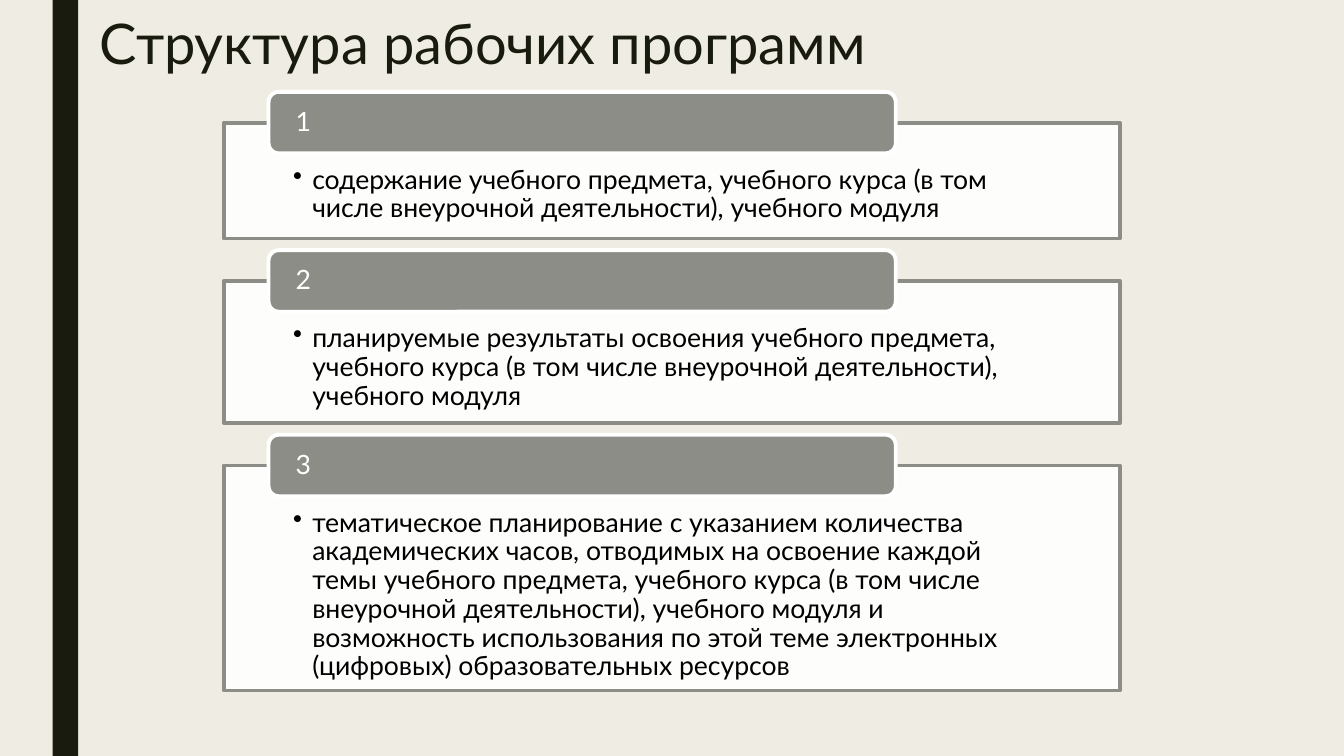
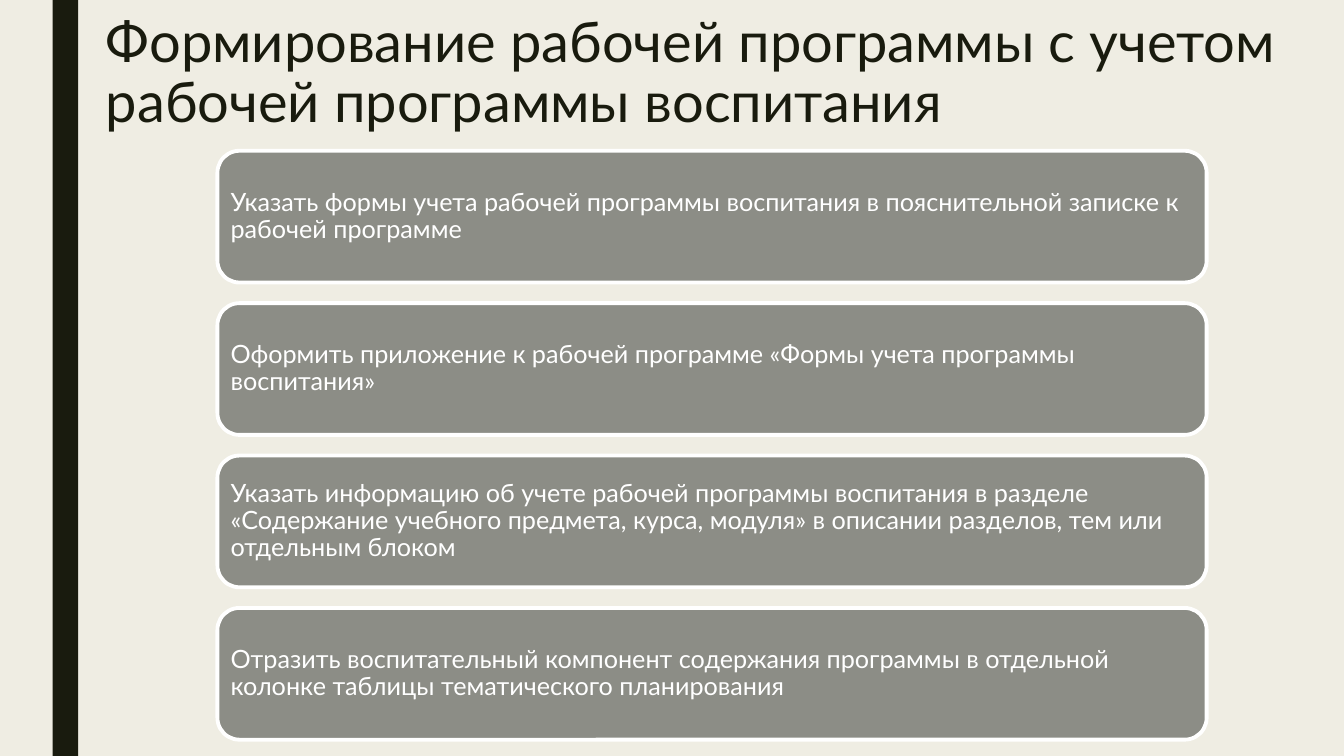
from dataclasses import dataclass

from lxml.etree import SubElement
from pptx import Presentation
from pptx.dml.color import RGBColor
from pptx.enum.shapes import MSO_SHAPE
from pptx.enum.text import MSO_ANCHOR, PP_ALIGN
from pptx.oxml.ns import qn
from pptx.shapes.autoshape import Shape
from pptx.slide import Slide
from pptx.util import Cm, Pt

INK = RGBColor(0x19, 0x1B, 0x0E)
CREAM = RGBColor(0xEF, 0xED, 0xE3)
GRAY = RGBColor(0x8C, 0x8D, 0x86)
WHITE = RGBColor(0xFF, 0xFF, 0xFF)
BLACK = RGBColor(0x00, 0x00, 0x00)
FONT = "Lato"
WIDTH, HEIGHT = 33.87, 19.05


@dataclass
class Box:
    left: float
    top: float
    width: float
    height: float


@dataclass
class TextStyle:
    size: float
    color: RGBColor
    insets: tuple[float, float, float, float]
    anchor: MSO_ANCHOR = MSO_ANCHOR.MIDDLE
    spacing: float = 0.9


@dataclass
class Section:
    label: str
    text: str
    height: float


TITLE = TextStyle(40, INK, (0.25, 0.13, 0.25, 0.13), MSO_ANCHOR.TOP, 0.89)
TAB = TextStyle(19, WHITE, (0.61, 0, 0.61, 0))
BODY = TextStyle(19, BLACK, (1.75, 1.1, 1.75, 0.38), MSO_ANCHOR.TOP)
STEP = TextStyle(18, WHITE, (0.17, 0.17, 0.17, 0.17))

SECTIONS = [
    Section("1", "содержание учебного предмета, учебного курса (в том числе "
            "внеурочной деятельности), учебного модуля", 2.92),
    Section("2", "планируемые результаты освоения учебного предмета, учебного "
            "курса (в том числе внеурочной деятельности), учебного модуля", 3.58),
    Section("3", "тематическое планирование с указанием количества академических "
            "часов, отводимых на освоение каждой темы учебного предмета, учебного "
            "курса (в том числе внеурочной деятельности), учебного модуля и "
            "возможность использования по этой теме электронных (цифровых) "
            "образовательных ресурсов", 5.67),
]
STEPS = [
    "Указать формы учета рабочей программы воспитания в пояснительной записке "
    "к рабочей программе",
    "Оформить приложение к рабочей программе «Формы учета программы воспитания»",
    "Указать информацию об учете рабочей программы воспитания в разделе "
    "«Содержание учебного предмета, курса, модуля» в описании разделов, тем или "
    "отдельным блоком",
    "Отразить воспитательный компонент содержания программы в отдельной колонке "
    "таблицы тематического планирования",
]


def lengths(box: Box) -> tuple[Cm, Cm, Cm, Cm]:
    return Cm(box.left), Cm(box.top), Cm(box.width), Cm(box.height)


def write(sp: Shape, text: str, style: TextStyle) -> None:
    tf = sp.text_frame
    tf.word_wrap = True
    tf.vertical_anchor = style.anchor
    tf.margin_left, tf.margin_top, tf.margin_right, tf.margin_bottom = map(Cm, style.insets)
    p = tf.paragraphs[0]
    p.text = text
    p.alignment = PP_ALIGN.LEFT
    p.line_spacing = style.spacing
    p.font.name = FONT
    p.font.size = Pt(style.size)
    p.font.color.rgb = style.color


def add_box(s: Slide, kind: MSO_SHAPE, box: Box, fill: RGBColor,
            line: RGBColor | None = None) -> Shape:
    sp = s.shapes.add_shape(kind, *lengths(box))
    sp.shadow.inherit = False
    sp.fill.solid()
    sp.fill.fore_color.rgb = fill
    if line is None:
        sp.line.fill.background()
    else:
        sp.line.color.rgb = line
        sp.line.width = Pt(2.75)
    return sp


def set_opacity(sp: Shape, percent: int) -> None:
    color = sp.fill._xPr.find(qn("a:solidFill"))[0]
    SubElement(color, qn("a:alpha"), val=str(percent * 1000))


def add_bullet(sp: Shape, indent: float) -> None:
    pPr = sp.text_frame.paragraphs[0]._p.get_or_add_pPr()
    pPr.set("marL", str(Cm(indent)))
    pPr.set("indent", str(-Cm(indent)))
    bullet = pPr.makeelement(qn("a:buChar"), {"char": "•"})
    pPr.insert_element_before(bullet, "a:tabLst", "a:defRPr", "a:extLst")


def add_slide(prs: Presentation, title: str, box: Box) -> Slide:
    s = prs.slides.add_slide(prs.slide_layouts[6])
    add_box(s, MSO_SHAPE.RECTANGLE, Box(1.33, 0, 0.64, HEIGHT), INK)
    write(s.shapes.add_textbox(*lengths(box)), title, TITLE)
    return s


def add_sections(s: Slide) -> None:
    left, top, width, gap, tab_height = 5.64, 3.09, 22.58, 1.07, 1.55
    for section in SECTIONS:
        panel = add_box(s, MSO_SHAPE.RECTANGLE,
                        Box(left, top, width, section.height), WHITE, GRAY)
        set_opacity(panel, 90)
        write(panel, section.text, BODY)
        add_bullet(panel, 0.48)
        tab_box = Box(left + width * 0.05, top - tab_height / 2, width * 0.7, tab_height)
        tab = add_box(s, MSO_SHAPE.ROUNDED_RECTANGLE, tab_box, GRAY, WHITE)
        write(tab, section.label, TAB)
        top += section.height + gap


def add_steps(s: Slide) -> None:
    for i, text in enumerate(STEPS):
        box = Box(5.48, 3.8 + i * 3.84, 24.93, 3.32)
        write(add_box(s, MSO_SHAPE.ROUNDED_RECTANGLE, box, GRAY, WHITE), text, STEP)


def main() -> None:
    prs = Presentation()
    prs.slide_width, prs.slide_height = Cm(WIDTH), Cm(HEIGHT)
    background = prs.slide_master.background.fill
    background.solid()
    background.fore_color.rgb = CREAM

    add_sections(add_slide(prs, "Структура рабочих программ", Box(2.27, 0.28, 26.67, 4.11)))
    add_steps(add_slide(
        prs, "Формирование рабочей программы с учетом рабочей программы воспитания",
        Box(2.42, 0.25, 31.06, 3.81)))
    prs.save("out.pptx")


if __name__ == "__main__":
    main()
